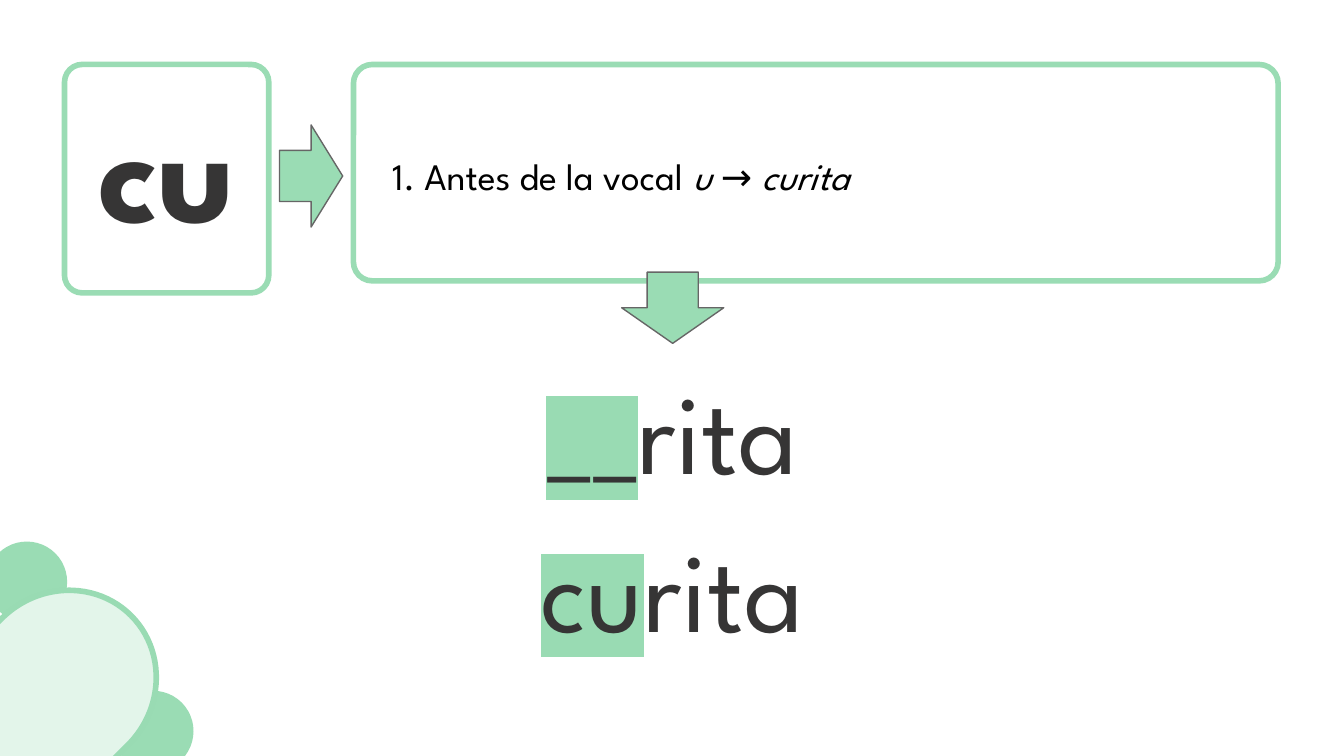
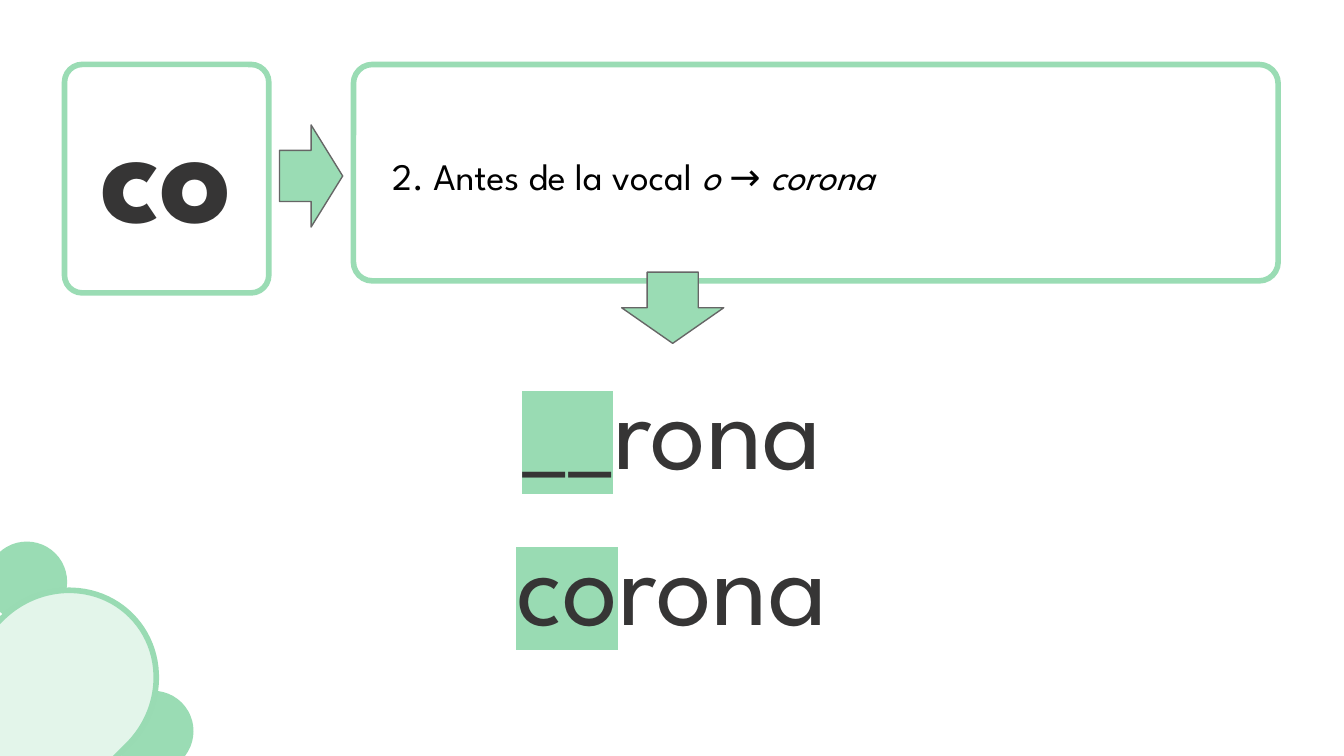
import pptx
import pptx.util
import pptx.dml.color
import pptx.enum.shapes
import pptx.enum.text
import pptx.oxml.ns
from lxml import etree

Inches, Pt = pptx.util.Inches, pptx.util.Pt
Form = pptx.enum.shapes.MSO_SHAPE
Align = pptx.enum.text.PP_ALIGN

HUES = {
    "mint": "9ADCB4",
    "leaf": "99DBB3",
    "pale": "E3F5EA",
    "dark": "363535",
    "black": "000000",
    "gray": "666666",
}
FONT = "League Spartan"
CELL = 0.1  # inches per grid column and row
WIDE, HIGH = 100, 56.25  # slide size in cells


def tone(name):
    return pptx.dml.color.RGBColor.from_string(HUES[name])


class Deck:
    def __init__(self):
        self.show = pptx.Presentation()
        self.show.slide_width = Inches(WIDE * CELL)
        self.show.slide_height = Inches(HIGH * CELL)
        self.slide = None

    def page(self):
        self.slide = self.show.slides.add_slide(self.show.slide_layouts[6])

    def shape(self, form, box, fill=None, line=None, width=3, turn=0):
        item = self.slide.shapes.add_shape(form, *[Inches(n * CELL) for n in box])
        item.shadow.inherit = False
        item.rotation = turn
        if fill:
            item.fill.solid()
            item.fill.fore_color.rgb = tone(fill)
        else:
            item.fill.background()
        if line:
            item.line.color.rgb = tone(line)
            item.line.width = Pt(width)
        else:
            item.line.fill.background()
        return item

    def frame(self, box):
        self.shape(Form.ROUNDED_RECTANGLE, box, line="mint").adjustments[0] = 0.087

    def arrow(self, box, turn=0):
        self.shape(Form.RIGHT_ARROW, box, "mint", "gray", 0.75, turn)

    def text(self, box, runs, size, hue="dark", bold=False, align=Align.CENTER):
        """Write runs given as (words, mark), mark being "", "slant" or "glow"."""
        item = self.slide.shapes.add_textbox(*[Inches(n * CELL) for n in box])
        body = item.text_frame
        body.word_wrap = True
        body.margin_left = body.margin_right = Inches(CELL)
        body.margin_top = body.margin_bottom = Inches(CELL)
        line = body.paragraphs[0]
        line.alignment = align
        for words, mark in runs:
            run = line.add_run()
            run.text = words
            run.font.name = FONT
            run.font.size = Pt(size)
            run.font.bold = bold
            run.font.italic = mark == "slant"
            run.font.color.rgb = tone(hue)
            if mark == "glow":
                self.glow(run)

    def glow(self, run):
        """Highlight the run; the element must directly follow its fill."""
        name = pptx.oxml.ns.qn
        mark = etree.Element(name("a:highlight"))
        etree.SubElement(mark, name("a:srgbClr")).set("val", HUES["leaf"])
        run.font._element.find(name("a:solidFill")).addnext(mark)

    def flower(self):
        for left, top in ((-1, 40.3), (8.4, 51.4)):
            self.shape(Form.OVAL, (left, top, 6, 6), "mint")
        self.shape(Form.FLOWCHART_DELAY, (-2.2, 44.1, 14, 13.3), "pale", "leaf", turn=315)
        self.shape(Form.RECTANGLE, (-6.8, 52.3, 12.7, 7.5), "pale", turn=45)

    def lesson(self, count, start, vowel, rest, top, step):
        self.page()
        self.flower()
        self.frame((26.3, 4.8, 68.8, 16.1))
        self.frame((4.8, 4.8, 15.2, 17))
        self.text((3.2, 5, 18.3, 14.8), [(start, "")], 76, bold=True)
        rule = [
            (f"{count}. Antes de la vocal ", ""),
            (vowel, "slant"),
            (" → ", ""),
            (start + rest, "slant"),
        ]
        self.text((28.2, 10.4, 65.2, 5.4), rule, 20, "black", align=Align.LEFT)
        for row, head in enumerate(("__", start)):
            box = (0, top + row * step, WIDE, 12.2)
            self.text(box, [(head, "glow"), (rest, "")], 60)
        self.arrow((20.8, 9.3, 4.7, 7.6))
        self.arrow((47.4, 19.1, 5.3, 7.6), 90)


def main():
    deck = Deck()
    deck.lesson(1, "cu", "u", "rita", top=26, step=11.7)
    deck.lesson(2, "co", "o", "rona", top=25.6, step=11.6)
    deck.show.save("out.pptx")


if __name__ == "__main__":
    main()
